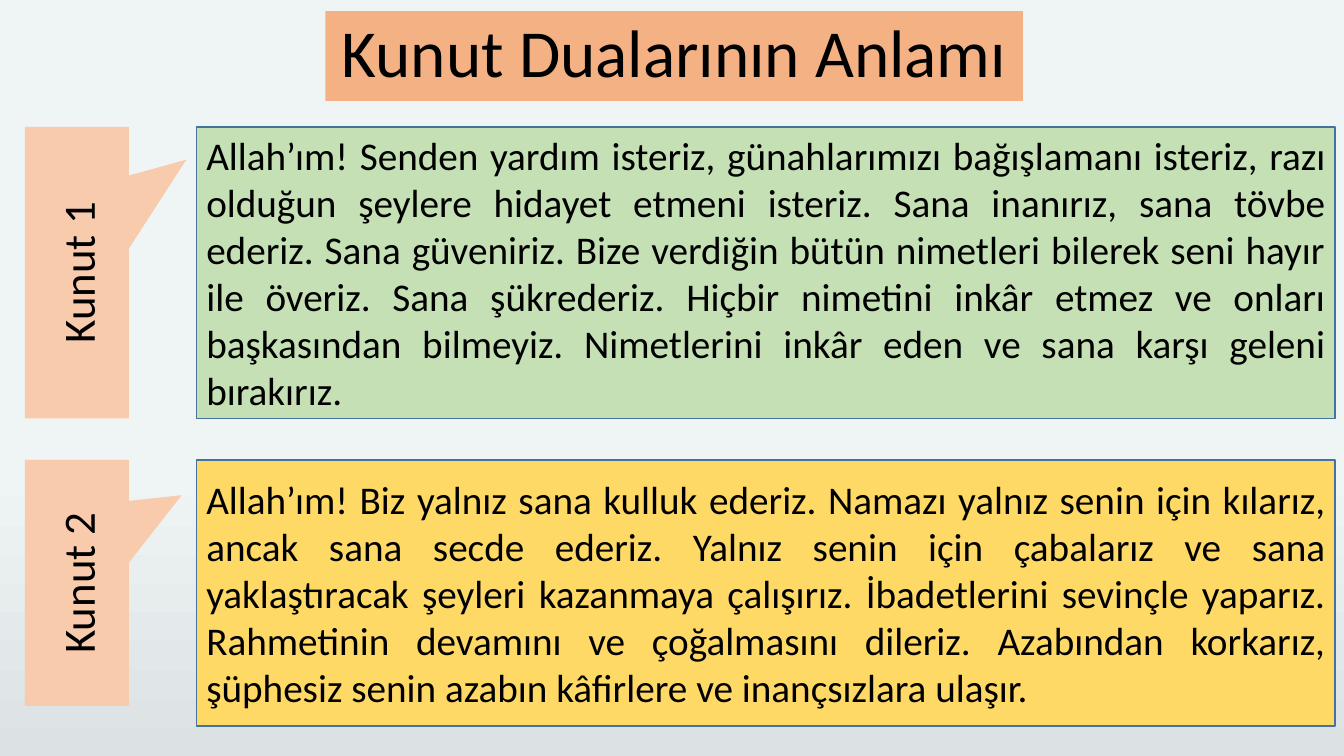
from dataclasses import dataclass

from pptx import Presentation
from pptx.dml.color import RGBColor
from pptx.enum.shapes import MSO_SHAPE
from pptx.enum.text import MSO_ANCHOR, MSO_AUTO_SIZE, PP_ALIGN
from pptx.util import Cm, Pt

RECT, CALLOUT = MSO_SHAPE.RECTANGLE, MSO_SHAPE.RECTANGULAR_CALLOUT
CENTER, JUSTIFY = PP_ALIGN.CENTER, PP_ALIGN.JUSTIFY
MIDDLE, NO_FIT = MSO_ANCHOR.MIDDLE, MSO_AUTO_SIZE.NONE


@dataclass(frozen=True)
class Theme:
    font: str = "Calibri"
    text: str = "000000"
    title_fill: str = "F4B183"
    label_fill: str = "F8CBAD"
    green: str = "C5E0B4"
    yellow: str = "FFD966"
    border: str = "43739E"
    sky: str = "EFF4F5"
    haze: str = "DCE1E4"
    title_size: int = 48
    label_size: int = 32
    body_size: int = 28


T = Theme()


def rgb(value):
    return RGBColor.from_string(value)


def fill_text(sp, text, size, align, fill):
    sp.fill.solid()
    sp.fill.fore_color.rgb = rgb(fill)
    tf = sp.text_frame
    frame_format = {"word_wrap": True, "auto_size": NO_FIT, "vertical_anchor": MIDDLE}
    for name, value in frame_format.items():
        setattr(tf, name, value)
    p = tf.paragraphs[0]
    p.alignment = align
    r = p.add_run()
    r.text = text
    for name, value in {"name": T.font, "size": Pt(size)}.items():
        setattr(r.font, name, value)
    r.font.color.rgb = rgb(T.text)
    return p


prs = Presentation()
prs.slide_width, prs.slide_height = Cm(33.87), Cm(19.05)
s = prs.slides.add_slide(prs.slide_layouts[5])

# Background gradient, darker towards the bottom
bg = s.background.fill
bg.gradient()
bg.gradient_angle = 270
for stop, (position, color) in zip(bg.gradient_stops, [(0.62, T.sky), (1, T.haze)]):
    stop.position = position
    stop.color.rgb = rgb(color)

# Title
title = s.shapes.title
title_box = {"left": 8.2, "top": 0.28, "width": 17.58, "height": 2.26}
for name, value in title_box.items():
    setattr(title, name, Cm(value))
p = fill_text(title, "Kunut Dualarının Anlamı", T.title_size, CENTER, T.title_fill)
p.line_spacing = 0.9

# Prayers: label, top, box height, label length, callout tip, fill, text
prayers = [
    ("Kunut 1", 3.2, 7.34, 7.34, (0.388, 1.052), T.green,
     "Allah’ım! Senden yardım isteriz, günahlarımızı bağışlamanı isteriz, "
     "razı olduğun şeylere hidayet etmeni isteriz. Sana inanırız, sana tövbe "
     "ederiz. Sana güveniriz. Bize verdiğin bütün nimetleri bilerek seni hayır "
     "ile överiz. Sana şükrederiz. Hiçbir nimetini inkâr etmez ve onları "
     "başkasından bilmeyiz. Nimetlerini inkâr eden ve sana karşı geleni "
     "bırakırız."),
    ("Kunut 2", 11.59, 6.71, 6.2, (0.357, 1.008), T.yellow,
     "Allah’ım! Biz yalnız sana kulluk ederiz. Namazı yalnız senin için "
     "kılarız, ancak sana secde ederiz. Yalnız senin için çabalarız ve sana "
     "yaklaştıracak şeyleri kazanmaya çalışırız. İbadetlerini sevinçle yaparız. "
     "Rahmetinin devamını ve çoğalmasını dileriz. Azabından korkarız, şüphesiz "
     "senin azabın kâfirlere ve inançsızlara ulaşır."),
]
BOX_LEFT, BOX_WIDTH = 4.95, 28.7
LABEL_CENTER, LABEL_DEPTH = 1.94, 2.62

for label, top, height, length, tip, fill, text in prayers:
    # Prayer text box
    sp = s.shapes.add_shape(RECT, Cm(BOX_LEFT), Cm(top), Cm(BOX_WIDTH), Cm(height))
    sp.shadow.inherit = False
    sp.line.color.rgb = rgb(T.border)
    sp.line.width = Pt(1)
    fill_text(sp, text, T.body_size, JUSTIFY, fill)

    # Upright label, turned about its centre and level with the box top
    sp = s.shapes.add_shape(
        CALLOUT, Cm(LABEL_CENTER - length / 2), Cm(top + (length - LABEL_DEPTH) / 2),
        Cm(length), Cm(LABEL_DEPTH))
    sp.rotation = 270
    sp.shadow.inherit = False
    sp.line.fill.background()
    for i, value in enumerate(tip):
        sp.adjustments[i] = value
    fill_text(sp, label, T.label_size, CENTER, T.label_fill)

prs.save("out.pptx")
